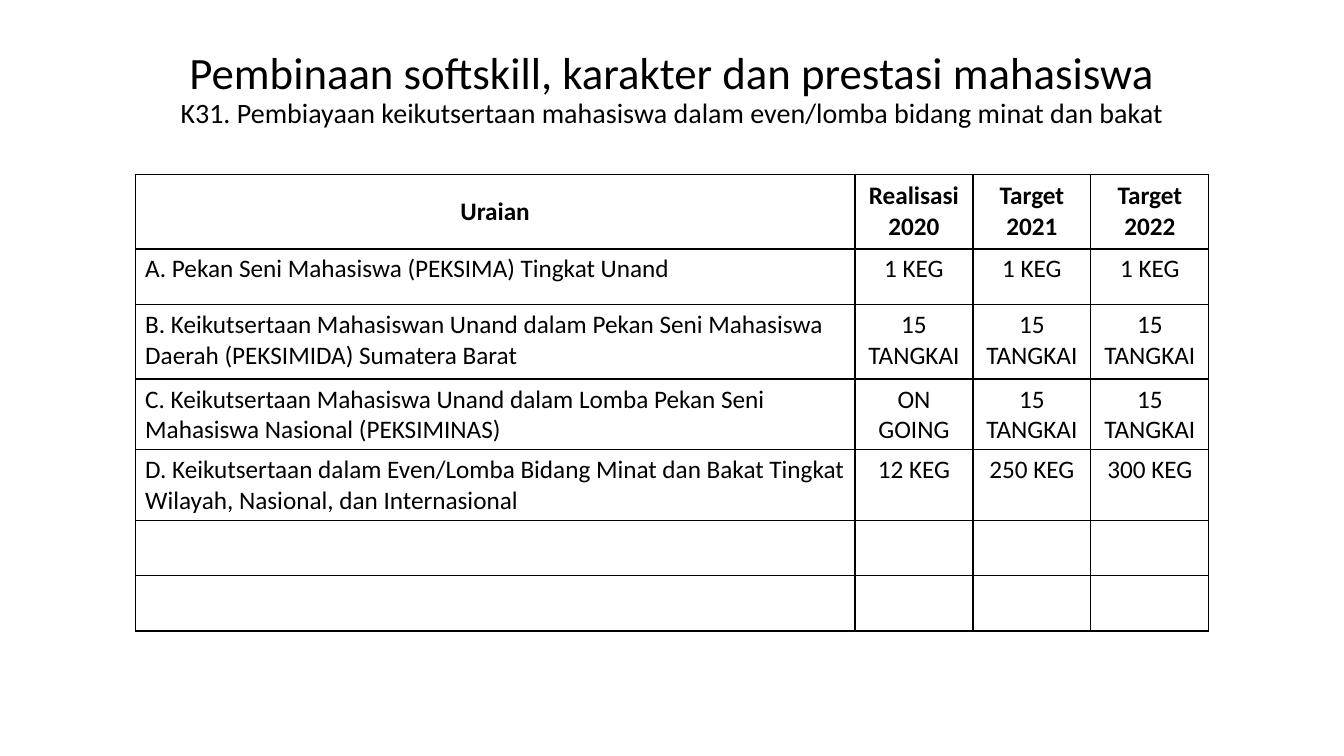
from lxml import etree
from pptx import Presentation
from pptx.dml.color import RGBColor
from pptx.enum.text import MSO_ANCHOR, PP_ALIGN
from pptx.oxml.ns import qn
from pptx.util import Inches, Pt

LEFT, CENTER = PP_ALIGN.LEFT, PP_ALIGN.CENTER
TOP, MIDDLE = MSO_ANCHOR.TOP, MSO_ANCHOR.MIDDLE
FONT, BLACK = "Calibri", "000000"

TITLE = "Pembinaan softskill, karakter dan prestasi mahasiswa"
SUBTITLE = ("K31. Pembiayaan keikutsertaan mahasiswa dalam even/lomba "
            "bidang minat dan bakat")
HEADS = ["Uraian", "Realisasi\n2020", "Target\n2021", "Target\n2022"]
ROWS = [
    ["A. Pekan Seni Mahasiswa (PEKSIMA) Tingkat Unand",
     "1 KEG", "1 KEG", "1 KEG"],
    ["B. Keikutsertaan Mahasiswan Unand dalam Pekan Seni Mahasiswa "
     "Daerah (PEKSIMIDA) Sumatera Barat",
     "15 TANGKAI", "15 TANGKAI", "15 TANGKAI"],
    ["C. Keikutsertaan Mahasiswa Unand dalam Lomba Pekan Seni "
     "Mahasiswa Nasional (PEKSIMINAS)",
     "ON GOING", "15 TANGKAI", "15 TANGKAI"],
    ["D. Keikutsertaan dalam Even/Lomba Bidang Minat dan Bakat Tingkat "
     "Wilayah, Nasional, dan Internasional",
     "12 KEG", "250 KEG", "300 KEG"],
    [""] * 4,
    [""] * 4,
]
WIDTHS = [7.14, 1.17, 1.17, 1.17]
HEIGHTS = [0.74, 0.55, 0.74, 0.55, 0.57, 0.55, 0.55]


def color(code):
    return RGBColor.from_string(code)


def write(para, text, size=18, bold=False, align=LEFT):
    """Append a formatted run to the paragraph."""
    para.alignment = align
    run = para.add_run()
    run.text = text
    font = run.font
    font.name, font.size, font.bold = FONT, Pt(size), bold
    font.color.rgb = color(BLACK)


def add_title(slide, left, top, width, height):
    box = slide.shapes.add_textbox(*map(Inches, (left, top, width, height)))
    frame = box.text_frame
    frame.word_wrap = True
    frame.vertical_anchor = MIDDLE
    para = frame.paragraphs[0]
    para.line_spacing = 0.9
    write(para, TITLE, size=32, align=CENTER)
    para.add_line_break()
    write(para, SUBTITLE, size=20, align=CENTER)


def add_border(cell, code=BLACK, width=1):
    props = cell._tc.get_or_add_tcPr()
    for place, side in enumerate(("lnL", "lnR", "lnT", "lnB")):
        line = etree.Element(qn(f"a:{side}"), w=str(Pt(width)))
        fill = etree.SubElement(line, qn("a:solidFill"))
        etree.SubElement(fill, qn("a:srgbClr"), val=code)
        props.insert(place, line)


def add_grid(slide, left, top):
    data = [HEADS] + ROWS
    box = (left, top, sum(WIDTHS), sum(HEIGHTS))
    table = slide.shapes.add_table(
        len(data), len(HEADS), *map(Inches, box)).table
    table.first_row = table.horz_banding = False
    for col, width in zip(table.columns, WIDTHS):
        col.width = Inches(width)
    for row, height in zip(table.rows, HEIGHTS):
        row.height = Inches(height)
    for r, texts in enumerate(data):
        head = r == 0
        for c, text in enumerate(texts):
            cell = table.cell(r, c)
            cell.fill.background()
            add_border(cell)
            cell.vertical_anchor = MIDDLE if head else TOP
            frame = cell.text_frame
            for i, line in enumerate(text.splitlines()):
                para = frame.add_paragraph() if i else frame.paragraphs[0]
                write(para, line, bold=head,
                      align=CENTER if head or c else LEFT)


def main():
    deck = Presentation()
    deck.slide_width, deck.slide_height = Inches(13.33), Inches(7.5)
    slide = deck.slides.add_slide(deck.slide_layouts[6])
    add_title(slide, 1.38, 0.35, 10.57, 1.08)
    add_grid(slide, 1.34, 1.73)
    deck.save("out.pptx")


if __name__ == "__main__":
    main()
